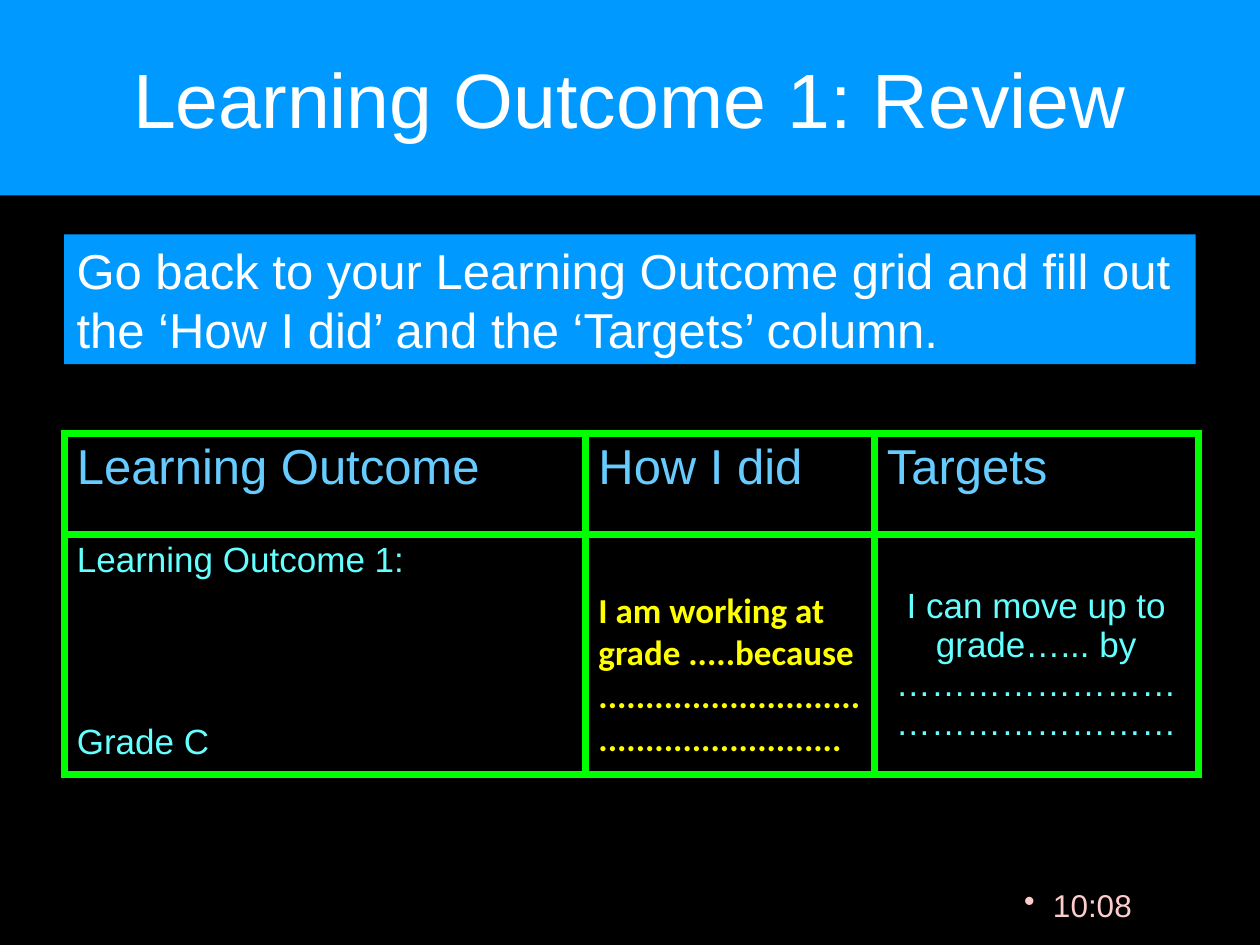
from dataclasses import dataclass

from lxml.etree import SubElement
from pptx import Presentation
from pptx.dml.color import RGBColor as RGB
from pptx.enum.shapes import MSO_SHAPE as Shape
from pptx.enum.text import MSO_ANCHOR as Anchor, PP_ALIGN as Align
from pptx.oxml import parse_xml
from pptx.oxml.ns import nsdecls, qn
from pptx.util import Inches, Pt


@dataclass(frozen=True)
class Theme:
    background: str = "000000"
    panel: str = "0099FF"
    light: str = "FFFFFF"
    heading: str = "66CCFF"
    entry: str = "66FFFF"
    progress: str = "FFFF00"
    clock: str = "FFCCCC"
    grid: str = "00FF00"
    grid_width: float = 4.5
    title_size: int = 44
    large: int = 28
    body: int = 20
    small: int = 18
    face: str = "Arial"
    progress_face: str = "Calibri"


THEME = Theme()


def write(paragraph, text, size, color, align=Align.LEFT, face=THEME.face, bold=False):
    paragraph.text = text
    paragraph.alignment = align
    font = paragraph.font
    font.size, font.name, font.bold = Pt(size), face, bold
    font.color.rgb = RGB.from_string(color)


def add_panel(slide, box, text, size, align):
    panel = slide.shapes.add_shape(Shape.RECTANGLE, *map(Inches, box))
    panel.shadow.inherit = False
    panel.fill.solid()
    panel.fill.fore_color.rgb = RGB.from_string(THEME.panel)
    panel.line.fill.background()
    frame = panel.text_frame
    frame.word_wrap = True
    frame.vertical_anchor = Anchor.MIDDLE
    write(frame.paragraphs[0], text, size, THEME.light, align)


def style_cell(cell):
    cell.fill.solid()
    cell.fill.fore_color.rgb = RGB.from_string(THEME.background)
    properties = cell._tc.get_or_add_tcPr()
    for position, side in enumerate("LRTB"):
        border = parse_xml(
            f'<a:ln{side} {nsdecls("a")} w="{Pt(THEME.grid_width)}"><a:solidFill>'
            f'<a:srgbClr val="{THEME.grid}"/></a:solidFill></a:ln{side}>'
        )
        properties.insert(position, border)


def add_review_grid(slide, box, column_widths, row_heights):
    grid = slide.shapes.add_table(
        len(row_heights), len(column_widths), *map(Inches, box)
    ).table
    grid.first_row = grid.horz_banding = False
    for column, width in zip(grid.columns, column_widths):
        column.width = Inches(width)
    for row, height in zip(grid.rows, row_heights):
        row.height = Inches(height)
    for cell in grid.iter_cells():
        style_cell(cell)

    for column, heading in enumerate(("Learning Outcome", "How I did", "Targets")):
        write(grid.cell(0, column).text_frame.paragraphs[0], heading,
              THEME.large, THEME.heading)

    outcome, progress, targets = (grid.cell(1, column) for column in range(3))
    write(outcome.text_frame.paragraphs[0], "Learning Outcome 1:",
          THEME.body, THEME.entry)
    grade = outcome.text_frame.add_paragraph()
    write(grade, "Grade C", THEME.body, THEME.entry)
    grade.space_before = Pt(82)

    progress.margin_top = Inches(0.44)
    write(progress.text_frame.paragraphs[0],
          "I am working at grade .....because " + "." * 54,
          THEME.body, THEME.progress, face=THEME.progress_face, bold=True)
    targets.margin_top = Inches(0.42)
    write(targets.text_frame.paragraphs[0],
          "I can move up to grade…... by " + "…" * 16,
          THEME.body, THEME.entry, Align.CENTER)


def add_clock(slide, box, time):
    frame = slide.shapes.add_textbox(*map(Inches, box)).text_frame
    frame.word_wrap = True
    paragraph = frame.paragraphs[0]
    write(paragraph, time, THEME.small, THEME.clock, Align.CENTER)
    properties = paragraph._p.get_or_add_pPr()
    properties.set("marL", str(Inches(0.09)))
    properties.set("indent", str(Inches(-0.23)))
    bullet = SubElement(properties, qn("a:buChar"))
    bullet.set("char", "•")
    properties.insert(0, bullet)


def main():
    deck = Presentation()
    deck.slide_width, deck.slide_height = Inches(10), Inches(7.5)
    slide = deck.slides.add_slide(deck.slide_layouts[6])
    slide.background.fill.solid()
    slide.background.fill.fore_color.rgb = RGB.from_string(THEME.background)

    add_clock(slide, (7.84, 6.98, 1.57, 0.52), "10:08")
    add_panel(slide, (0, 0, 10, 1.55), "Learning Outcome 1: Review",
              THEME.title_size, Align.CENTER)
    add_review_grid(slide, (0.51, 3.44, 9, 2.67), (4.14, 2.29, 2.57), (0.8, 1.87))
    add_panel(slide, (0.51, 1.86, 8.98, 1.03),
              "Go back to your Learning Outcome grid and fill out "
              "the ‘How I did’ and the ‘Targets’ column.",
              THEME.large, Align.LEFT)
    deck.save("out.pptx")


if __name__ == "__main__":
    main()
